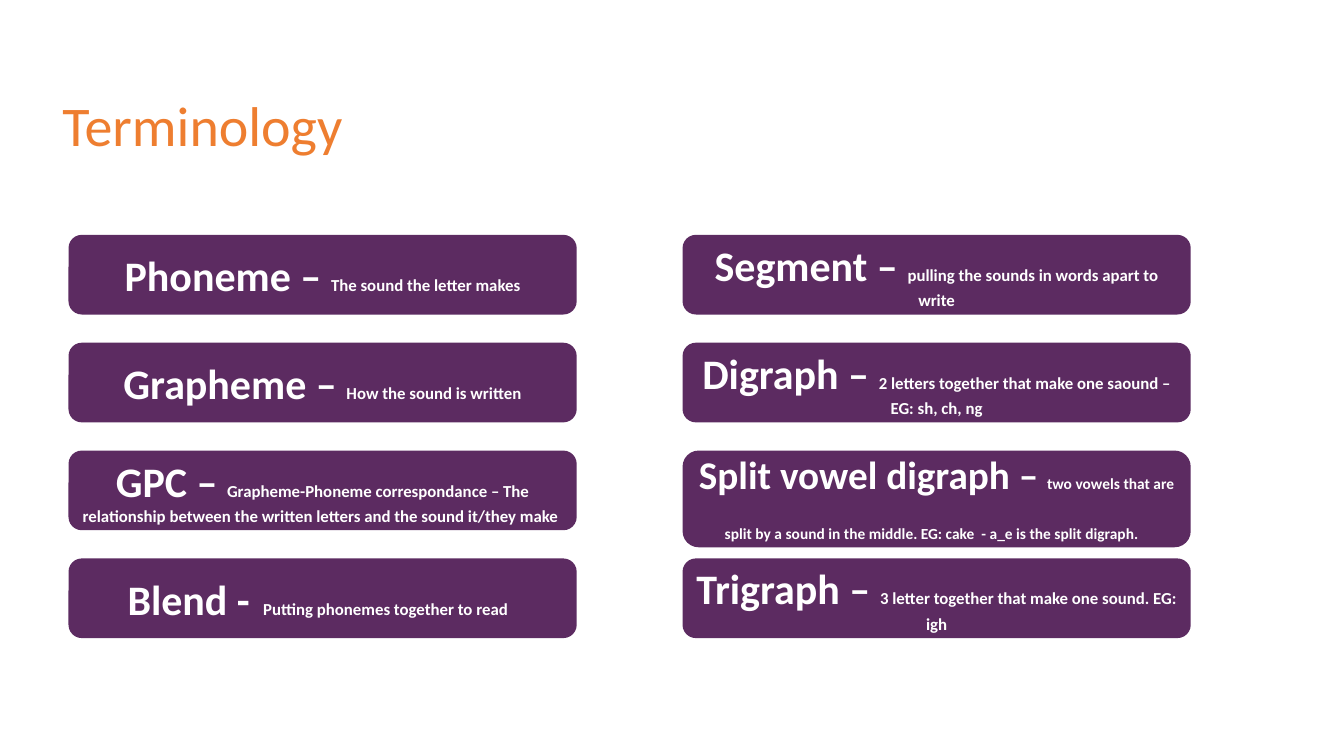
from dataclasses import dataclass

from pptx import Presentation
from pptx.dml.color import RGBColor
from pptx.enum.shapes import MSO_SHAPE
from pptx.enum.text import MSO_ANCHOR, PP_ALIGN
from pptx.slide import Slide
from pptx.util import Emu, Pt

ROUNDED = MSO_SHAPE.ROUNDED_RECTANGLE
MIDDLE, BOTTOM = MSO_ANCHOR.MIDDLE, MSO_ANCHOR.BOTTOM
CENTER = PP_ALIGN.CENTER
EMU_PER_PX = 9144  # 100 px to the inch


@dataclass(frozen=True)
class Theme:
    font: str = "Calibri"
    heading: RGBColor = RGBColor(0xEE, 0x7E, 0x30)
    card: RGBColor = RGBColor(0x5C, 0x2B, 0x61)
    card_text: RGBColor = RGBColor(0xFF, 0xFF, 0xFF)
    heading_size: int = 40
    term_size: int = 30
    meaning_size: int = 12


THEME = Theme()


@dataclass(frozen=True)
class Term:
    name: str
    meaning: str
    name_size: int = THEME.term_size
    meaning_size: int = THEME.meaning_size
    height: int = 79
    tall_ending: bool = False  # closing space at term size sets the line height


# Terms by column, top to bottom
COLUMNS = (
    (
        Term("Phoneme – ", "The sound the letter makes"),
        Term("Grapheme – ", "How the sound is written"),
        Term("GPC – ", "Grapheme-Phoneme correspondance – The relationship "
             "between the written letters and the sound it/they make "),
        Term("Blend - ", " Putting phonemes together to read", tall_ending=True),
    ),
    (
        Term("Segment – ", "pulling the sounds in words apart to write"),
        Term("Digraph – ", "2 letters together that make one saound – EG: sh, ch, ng"),
        Term("Split vowel digraph – ", "two vowels that are split by a sound in the "
             "middle. EG: cake  - a_e is the split digraph.",
             name_size=28, meaning_size=11, height=96, tall_ending=True),
        Term("Trigraph – ", "3 letter together that make one sound. EG: igh"),
    ),
)
GRID_LEFT, GRID_TOP = 68, 233
COLUMN_STEP, ROW_STEP = 609, 107
CARD_WIDTH = 504


def px(length: int) -> Emu:
    return Emu(length * EMU_PER_PX)


def add_run(paragraph, text: str, size: int, color: RGBColor, bold: bool = False) -> None:
    run = paragraph.add_run()
    run.text = text
    run.font.name = THEME.font
    run.font.size = Pt(size)
    run.font.bold = bold
    run.font.color.rgb = color


def add_heading(slide: Slide, text: str) -> None:
    heading = slide.shapes.add_textbox(px(52), px(36), px(1071), px(126))
    frame = heading.text_frame
    frame.word_wrap = True
    frame.vertical_anchor = BOTTOM
    line = frame.paragraphs[0]
    line.line_spacing = 0.9
    add_run(line, text, THEME.heading_size, THEME.heading)


def add_term(slide: Slide, term: Term, left: int, top: int) -> None:
    card = slide.shapes.add_shape(ROUNDED, px(left), px(top), px(CARD_WIDTH), px(term.height))
    card.shadow.inherit = False
    card.fill.solid()
    card.fill.fore_color.rgb = THEME.card
    card.line.fill.background()
    frame = card.text_frame
    frame.word_wrap = True
    frame.vertical_anchor = MIDDLE
    entry = frame.paragraphs[0]
    entry.alignment = CENTER
    add_run(entry, term.name, term.name_size, THEME.card_text, bold=True)
    add_run(entry, term.meaning, term.meaning_size, THEME.card_text, bold=True)
    if term.tall_ending:
        add_run(entry, " ", THEME.term_size, THEME.card_text, bold=True)


def main() -> None:
    deck = Presentation()
    deck.slide_width, deck.slide_height = px(1333), px(750)
    slide = deck.slides.add_slide(deck.slide_layouts[6])

    # Heading
    add_heading(slide, "Terminology")

    # Two columns of term cards
    for column, terms in enumerate(COLUMNS):
        for row, term in enumerate(terms):
            add_term(slide, term, GRID_LEFT + column * COLUMN_STEP, GRID_TOP + row * ROW_STEP)

    deck.save("out.pptx")


if __name__ == "__main__":
    main()
